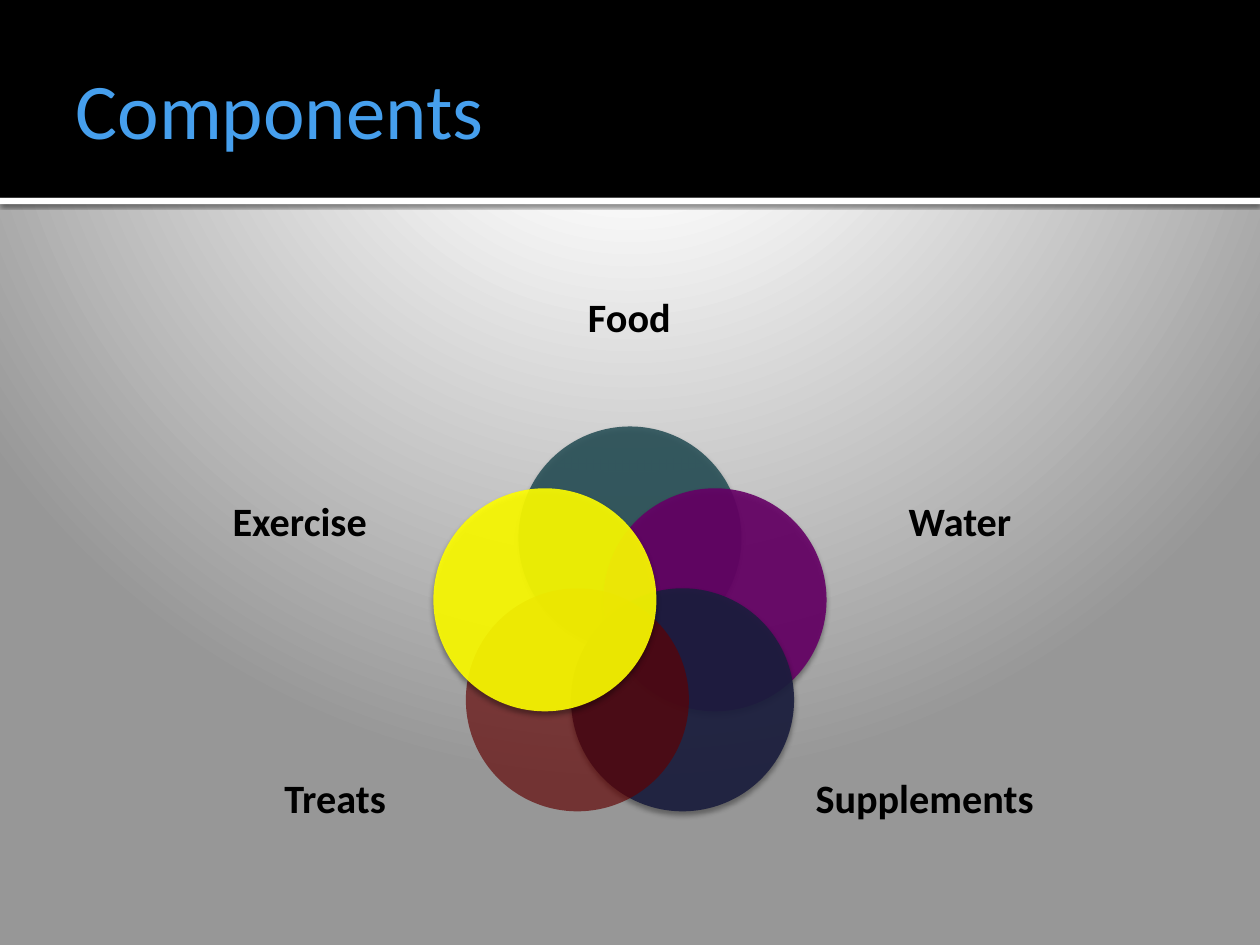
from math import cos, radians, sin

from pptx import Presentation
from pptx.dml.color import RGBColor
from pptx.enum.shapes import MSO_SHAPE as Shape
from pptx.enum.text import MSO_ANCHOR as Anchor, MSO_AUTO_SIZE as AutoSize, PP_ALIGN as Align
from pptx.oxml import parse_xml
from pptx.oxml.ns import nsdecls, qn
from pptx.util import Inches, Pt

BLACK = RGBColor(0x00, 0x00, 0x00)
WHITE = RGBColor(0xFF, 0xFF, 0xFF)
GRAY = RGBColor(0x97, 0x97, 0x97)
BLUE = RGBColor(0x46, 0x9F, 0xED)
TEAL = RGBColor(0x2B, 0x52, 0x59)
PURPLE = RGBColor(0x66, 0x00, 0x66)
NAVY = RGBColor(0x1B, 0x1E, 0x3E)
MAROON = RGBColor(0x60, 0x00, 0x00)
YELLOW = RGBColor(0xFF, 0xFF, 0x00)
FONT = "Calibri"
CIRCLE_SIZE = 1.77
RING_RADIUS = 0.71
CIRCLE_SHADOW = {"opacity": 38, "blur": 3.1, "distance": 2}
PETALS = [
    ("Food", TEAL, 90, CIRCLE_SHADOW, (3.97, 1.94, 2.05, 1.19)),
    ("Water", PURPLE, 90, CIRCLE_SHADOW, (6.7, 3.51, 1.84, 1.29)),
    ("Supplements", NAVY, 90, CIRCLE_SHADOW, (6.42, 5.71, 1.84, 1.29)),
    ("Treats", MAROON, 66, None, (1.74, 5.71, 1.84, 1.29)),
    ("Exercise", YELLOW, 90, CIRCLE_SHADOW, (1.46, 3.51, 1.84, 1.29)),
]


def inches(box):
    """Turn a left, top, width, height box into lengths."""
    return [Inches(value) for value in box]


def write_text(frame, text, size, color, bold=False, align=Align.LEFT):
    """Write one formatted paragraph, centred vertically, into a text frame."""
    frame.word_wrap = True
    frame.auto_size = AutoSize.NONE
    frame.vertical_anchor = Anchor.MIDDLE
    para = frame.paragraphs[0]
    para.alignment = align
    span = para.add_run()
    span.text = text
    span.font.name = FONT
    span.font.size = Pt(size)
    span.font.bold = bold
    span.font.color.rgb = color
    return para


def add_filled(shapes, kind, box, color, opacity=100, shadow=None):
    """Add a borderless shape with optional transparency and shadow."""
    shape = shapes.add_shape(kind, *inches(box))
    shape.shadow.inherit = False
    shape.fill.solid()
    shape.fill.fore_color.rgb = color
    shape.line.fill.background()
    properties = shape._element.spPr
    if opacity < 100:
        fill_color = properties.find(qn("a:solidFill"))[0]
        fill_color.append(parse_xml(f'<a:alpha {nsdecls("a")} val="{opacity * 1000}"/>'))
    if shadow:
        properties.find(qn("a:effectLst")).append(parse_xml(
            f'<a:outerShdw {nsdecls("a")} blurRad="{Pt(shadow["blur"])}" '
            f'dist="{Pt(shadow["distance"])}" dir="5400000" rotWithShape="0">'
            f'<a:srgbClr val="{BLACK}"><a:alpha val="{shadow["opacity"] * 1000}"/>'
            '</a:srgbClr></a:outerShdw>'))
    return shape


def paint_background(page):
    """Give the page a glow that spreads from above its top edge."""
    stops = "".join(
        f'<a:gs pos="{position * 1000}"><a:srgbClr val="{color}"/></a:gs>'
        for position, color in [(0, WHITE), (12, WHITE), (20, WHITE), (100, GRAY)])
    page._element.cSld.insert(0, parse_xml(
        f'<p:bg {nsdecls("p", "a")}><p:bgPr><a:gradFill rotWithShape="1">'
        f'<a:gsLst>{stops}</a:gsLst><a:path path="circle">'
        '<a:fillToRect l="10000" t="-25000" r="10000" b="125000"/></a:path>'
        '</a:gradFill><a:effectLst/></p:bgPr></p:bg>'))


def add_header(page, box):
    """Place the black band, its white edge and the title."""
    left, top, width, height = box
    title = page.shapes.title
    edge_shadow = {"opacity": 60, "blur": 2.5, "distance": 0.8}
    add_filled(page.shapes, Shape.RECTANGLE, (left, top + height, width, 0.05),
               WHITE, shadow=edge_shadow)
    add_filled(page.shapes, Shape.RECTANGLE, box, BLACK)
    page.shapes._spTree.append(title._element)
    title.left, title.top, title.width, title.height = inches(
        (left + 0.5, top + 0.17, width - 1, 1.37))
    frame = title.text_frame
    frame.margin_left = Inches(0.1)
    frame.margin_top = frame.margin_right = frame.margin_bottom = Inches(0.05)
    write_text(frame, "Components", 45, BLUE)


def add_venn(page, center_x, center_y):
    """Place five overlapping circles around a centre, with their labels."""
    group = page.shapes.add_group_shape()
    for index, (text, color, opacity, shadow, label_box) in enumerate(PETALS):
        angle = radians(index * 360 / len(PETALS))
        left = center_x + RING_RADIUS * sin(angle) - CIRCLE_SIZE / 2
        top = center_y - RING_RADIUS * cos(angle) - CIRCLE_SIZE / 2
        add_filled(group.shapes, Shape.OVAL, (left, top, CIRCLE_SIZE, CIRCLE_SIZE),
                   color, opacity, shadow)
        frame = group.shapes.add_textbox(*inches(label_box)).text_frame
        frame.margin_left = frame.margin_right = frame.margin_top = frame.margin_bottom = 0
        para = write_text(frame, text, 23, BLACK, bold=True, align=Align.CENTER)
        para.line_spacing = 0.9
        para.space_after = Pt(8)


def main():
    """Build the deck and save it."""
    deck = Presentation()
    deck.slide_width, deck.slide_height = Inches(10), Inches(7.5)
    page = deck.slides.add_slide(deck.slide_layouts[5])
    paint_background(page)
    add_header(page, (0, 0, 10, 1.57))
    add_venn(page, 5, 4.98)
    deck.save("out.pptx")


if __name__ == "__main__":
    main()
